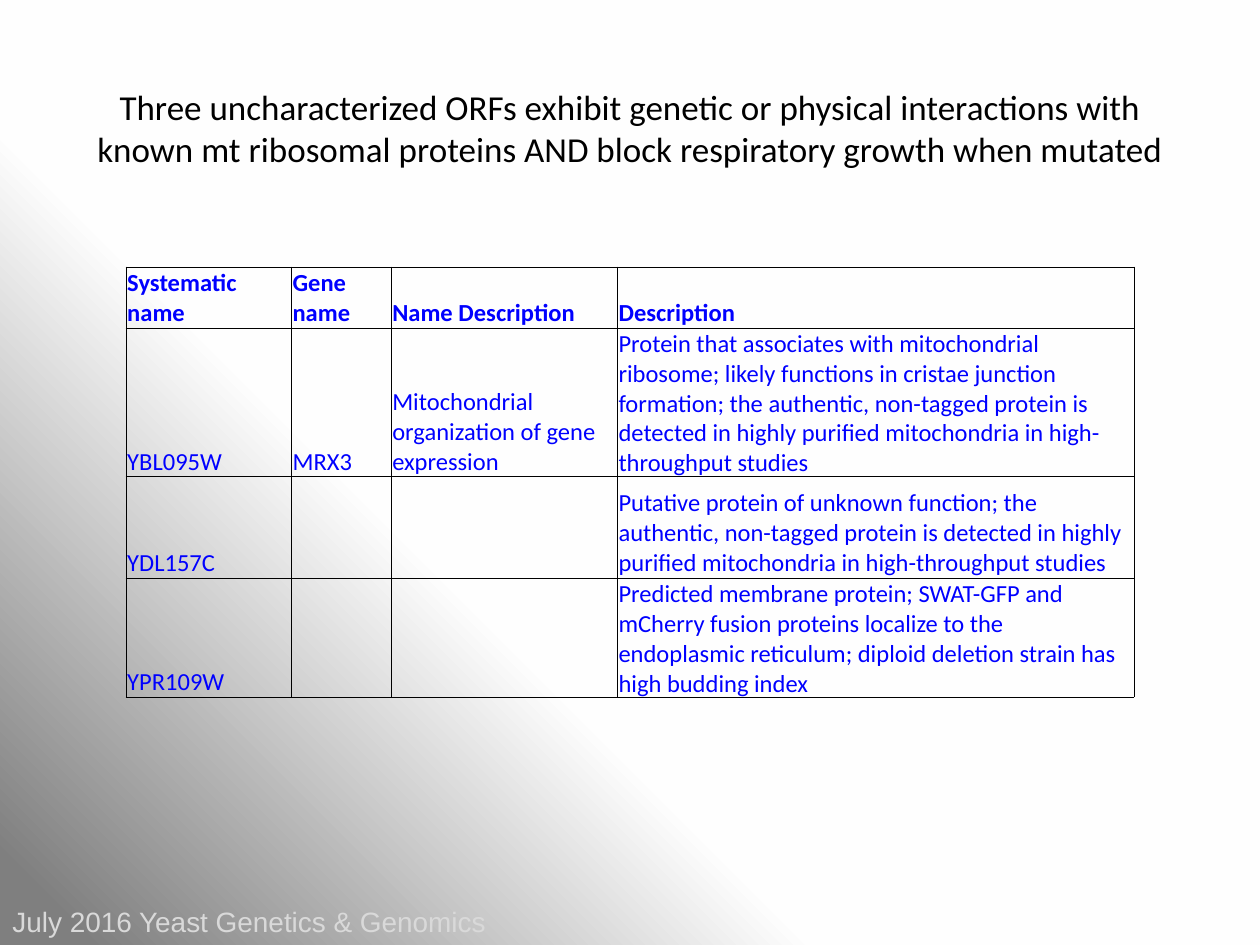
from typing import NamedTuple

from pptx import Presentation
from pptx.dml.color import RGBColor
from pptx.enum.text import MSO_ANCHOR, MSO_AUTO_SIZE, PP_ALIGN
from pptx.oxml import parse_xml
from pptx.oxml.ns import nsdecls
from pptx.util import Pt

BOTTOM = MSO_ANCHOR.BOTTOM
LEFT, CENTER = PP_ALIGN.LEFT, PP_ALIGN.CENTER
GROW = MSO_AUTO_SIZE.SHAPE_TO_FIT_TEXT

COLORS = {
    "title": "000000",
    "table_text": "0000FF",
    "border": "000000",
    "footer": "D9D9D9",
}
BACKGROUND_STOPS = [(0, "FFFFFF"), (63, "FEFEFE"), (96, "7F7F7F")]


class Label(NamedTuple):
    text: str
    left: float
    top: float
    width: float
    height: float
    size: float
    font: str
    color: str
    align: PP_ALIGN
    wrap: bool


class Gene(NamedTuple):
    systematic_name: str
    gene_name: str
    name_description: str
    description: str


LABELS = [
    Label("July 2016 Yeast Genetics & Genomics", 0, 513.3, 288.7, 26.7,
          16, "Arial", "footer", LEFT, False),
    Label("Three uncharacterized ORFs exhibit genetic or physical interactions "
          "with known mt ribosomal proteins AND block respiratory growth when "
          "mutated", 36, 45.4, 648, 55.7, 20, "Calibri", "title", CENTER, True),
]

GENES = [
    Gene("Systematic name", "Gene name", "Name Description", "Description"),
    Gene("YBL095W", "MRX3", "Mitochondrial organization of gene expression",
         "Protein that associates with mitochondrial ribosome; likely functions "
         "in cristae junction formation; the authentic, non-tagged protein is "
         "detected in highly purified mitochondria in high-throughput studies"),
    Gene("YDL157C", "", "",
         "Putative protein of unknown function; the authentic, non-tagged "
         "protein is detected in highly purified mitochondria in "
         "high-throughput studies"),
    Gene("YPR109W", "", "",
         "Predicted membrane protein; SWAT-GFP and mCherry fusion proteins "
         "localize to the endoplasmic reticulum; diploid deletion strain has "
         "high budding index"),
]
COLUMN_WIDTHS = [94.5, 57, 129.3, 295.2]
ROW_HEIGHTS = [34.8, 85, 58, 68]


def format_runs(paragraph, font: str, size: float, color: str,
                bold: bool = False) -> None:
    for run in paragraph.runs:
        run.font.name = font
        run.font.size = Pt(size)
        run.font.bold = bold
        run.font.color.rgb = RGBColor.from_string(COLORS[color])


def set_background(slide) -> None:
    """Circular gradient centred on the top right corner."""
    slide.background.fill.gradient()
    gradient = slide.element.xpath(".//p:bgPr/a:gradFill")[0]
    stops = "".join(
        f'<a:gs pos="{position * 1000}"><a:srgbClr val="{color}"/></a:gs>'
        for position, color in BACKGROUND_STOPS)
    gradient.getparent().replace(gradient, parse_xml(
        f'<a:gradFill {nsdecls("a")} rotWithShape="1"><a:gsLst>{stops}</a:gsLst>'
        '<a:path path="circle"><a:fillToRect l="100000" b="100000"/></a:path>'
        '</a:gradFill>'))


def add_label(slide, label: Label) -> None:
    shape = slide.shapes.add_textbox(Pt(label.left), Pt(label.top),
                                     Pt(label.width), Pt(label.height))
    text_frame = shape.text_frame
    text_frame.word_wrap = label.wrap
    text_frame.auto_size = GROW
    text_frame.text = label.text
    paragraph = text_frame.paragraphs[0]
    paragraph.alignment = label.align
    format_runs(paragraph, label.font, label.size, label.color)


def set_borders(cell, width: float = 0.5) -> None:
    properties = cell._tc.get_or_add_tcPr()
    for index, side in enumerate(("lnL", "lnR", "lnT", "lnB")):
        properties.insert(index, parse_xml(
            f'<a:{side} {nsdecls("a")} w="{Pt(width)}"><a:solidFill>'
            f'<a:srgbClr val="{COLORS["border"]}"/></a:solidFill></a:{side}>'))


def fill_cell(cell, text: str, bold: bool) -> None:
    cell.fill.background()
    set_borders(cell)
    cell.vertical_anchor = BOTTOM
    cell.margin_left = cell.margin_right = cell.margin_top = Pt(0.72)
    cell.margin_bottom = Pt(0)
    if text:
        cell.text_frame.text = text
        format_runs(cell.text_frame.paragraphs[0], "Calibri", 14,
                    "table_text", bold)


def add_gene_table(slide, genes: list[Gene]) -> None:
    table = slide.shapes.add_table(
        len(genes), len(COLUMN_WIDTHS), Pt(72), Pt(152.6),
        Pt(sum(COLUMN_WIDTHS)), Pt(sum(ROW_HEIGHTS))).table
    table.first_row = table.horz_banding = False
    for column, width in zip(table.columns, COLUMN_WIDTHS):
        column.width = Pt(width)
    for row_index, (row, gene) in enumerate(zip(table.rows, genes)):
        row.height = Pt(ROW_HEIGHTS[row_index])
        for cell, text in zip(row.cells, gene):
            fill_cell(cell, text, bold=row_index == 0)


def main() -> None:
    presentation = Presentation()
    presentation.slide_width, presentation.slide_height = Pt(720), Pt(540)
    slide = presentation.slides.add_slide(presentation.slide_layouts[6])

    set_background(slide)
    # Footer and title
    for label in LABELS:
        add_label(slide, label)
    # Uncharacterized genes
    add_gene_table(slide, GENES)

    presentation.save("out.pptx")


if __name__ == "__main__":
    main()
